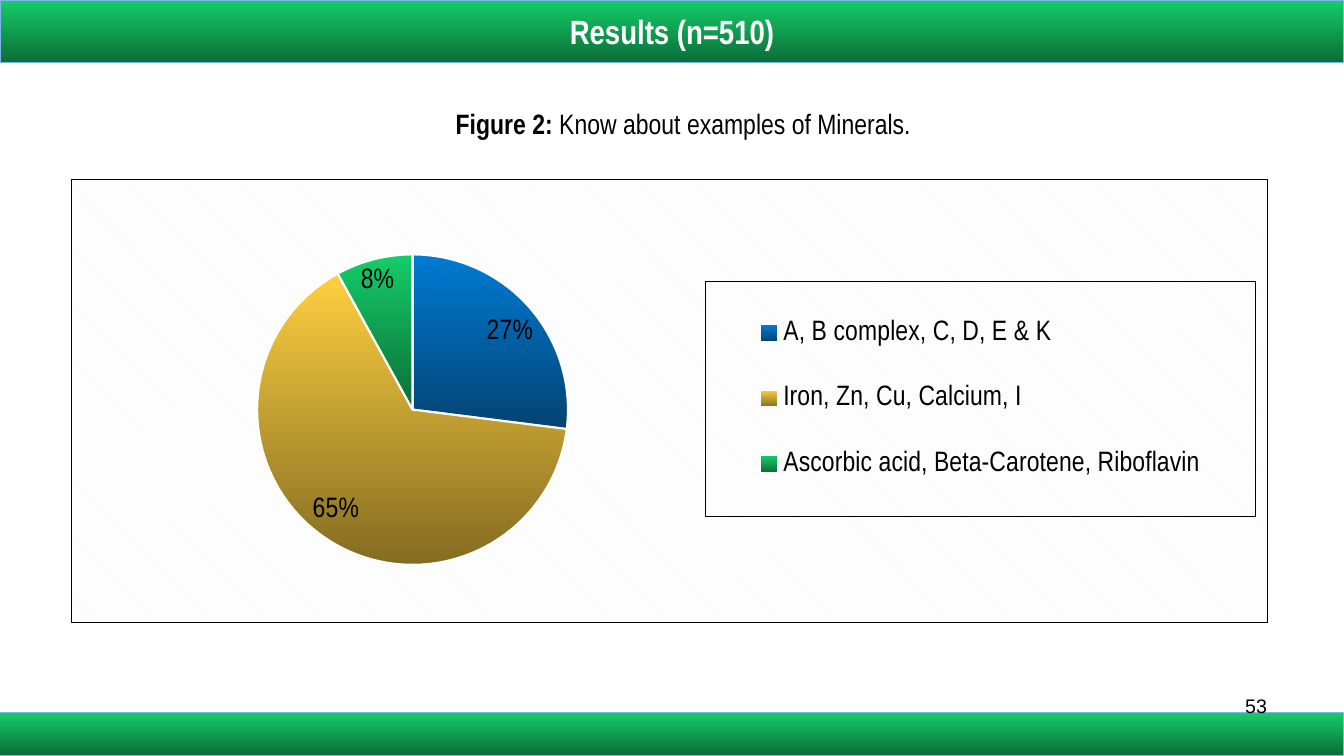
from dataclasses import dataclass

from lxml.etree import _Element
from pptx import Presentation
from pptx.chart.chart import Chart
from pptx.chart.data import CategoryChartData
from pptx.dml.color import RGBColor
from pptx.dml.fill import FillFormat
from pptx.enum.chart import XL_CHART_TYPE, XL_LABEL_POSITION, XL_LEGEND_POSITION
from pptx.enum.shapes import MSO_SHAPE
from pptx.enum.text import MSO_ANCHOR, MSO_AUTO_SIZE, PP_ALIGN
from pptx.oxml import parse_xml
from pptx.oxml.ns import nsdecls, qn
from pptx.shapes.base import BaseShape
from pptx.slide import Slide
from pptx.text.text import Font, TextFrame
from pptx.util import Cm, Pt


@dataclass(frozen=True)
class Gradient:
    top: str
    bottom: str


@dataclass(frozen=True)
class Theme:
    font: str = "Arial Narrow"
    number_font: str = "Arial"
    title_size: int = 24
    body_size: int = 20
    number_size: int = 14
    text: str = "000000"
    light: str = "FFFFFF"
    panel: str = "FCFCFC"
    band_line: str = "7DB6EF"
    blue: Gradient = Gradient("007BD3", "034373")
    gold: Gradient = Gradient("FECF40", "846C21")
    green: Gradient = Gradient("14CD68", "0B6E38")


@dataclass(frozen=True)
class Box:
    """Left, top, width and height: centimetres, or fractions of the chart."""
    left: float
    top: float
    width: float
    height: float

    def lengths(self) -> tuple[Cm, Cm, Cm, Cm]:
        return Cm(self.left), Cm(self.top), Cm(self.width), Cm(self.height)


@dataclass(frozen=True)
class Slice:
    label: str
    percent: int
    gradient: Gradient


THEME = Theme()
PAGE_WIDTH, PAGE_HEIGHT = 33.87, 19.05
HEADER = Box(0, 0, PAGE_WIDTH, 1.57)
FOOTER = Box(0, 17.96, PAGE_WIDTH, 1.07)
CAPTION = Box(10.87, 2.57, 12.7, 1.12)
CHART = Box(1.8, 4.5, 30.15, 11.2)
NUMBER = Box(24.28, 17.35, 7.9, 1.32)
PLOT = Box(0.07, 0.17, 0.43, 0.7)
LEGEND = Box(0.53, 0.23, 0.46, 0.53)
SLICES = [
    Slice("A, B complex, C, D, E & K", 27, THEME.blue),
    Slice("Iron, Zn, Cu, Calcium, I", 65, THEME.gold),
    Slice("Ascorbic acid, Beta-Carotene, Riboflavin", 8, THEME.green),
]


def style_font(font: Font, *, name: str = THEME.font, size: int = THEME.body_size,
               color: str = THEME.text, bold: bool = False) -> None:
    font.name, font.size, font.bold = name, Pt(size), bold
    font.color.rgb = RGBColor.from_string(color)


def write(frame: TextFrame, text: str, *, align: PP_ALIGN = PP_ALIGN.CENTER,
          name: str = THEME.font, size: int = THEME.body_size,
          color: str = THEME.text, bold: bool = False) -> None:
    """Add a formatted span to the first paragraph."""
    para = frame.paragraphs[0]
    para.alignment = align
    span = para.add_run()
    span.text = text
    style_font(span.font, name=name, size=size, color=color, bold=bold)


def fill_gradient(fill: FillFormat, gradient: Gradient) -> None:
    fill.gradient()
    fill.gradient_angle = 270
    for stop, color, position in zip(fill.gradient_stops,
                                     (gradient.top, gradient.bottom), (0, 1)):
        stop.color.rgb = RGBColor.from_string(color)
        stop.position = position


def style_band(band: BaseShape) -> None:
    fill_gradient(band.fill, THEME.green)
    band.line.color.rgb = RGBColor.from_string(THEME.band_line)
    band.line.width = Pt(0.75)
    band.shadow.inherit = False


def add_text_box(page: Slide, place: Box) -> TextFrame:
    frame = page.shapes.add_textbox(*place.lengths()).text_frame
    frame.word_wrap = True
    return frame


def frame_properties(fill: str) -> _Element:
    """Chart-part formatting with a thin dark border."""
    return parse_xml(
        f'<c:spPr {nsdecls("c", "a")}>{fill}<a:ln w="9525"><a:solidFill>'
        f'<a:srgbClr val="{THEME.text}"/></a:solidFill></a:ln></c:spPr>')


def manual_layout(place: Box, target: str = "") -> _Element:
    return parse_xml(
        f'<c:layout {nsdecls("c")}><c:manualLayout>{target}'
        '<c:xMode val="edge"/><c:yMode val="edge"/>'
        f'<c:x val="{place.left}"/><c:y val="{place.top}"/>'
        f'<c:w val="{place.width}"/><c:h val="{place.height}"/>'
        '</c:manualLayout></c:layout>')


def arrange_chart(chart: Chart) -> None:
    """Place the plot and legend, and frame the legend and the whole chart."""
    root = chart.element.find(qn("c:chart"))
    plot_area, legend = root.find(qn("c:plotArea")), root.find(qn("c:legend"))
    for part in (plot_area, legend):
        for layout in part.findall(qn("c:layout")):
            part.remove(layout)
    plot_area.insert(0, manual_layout(PLOT, '<c:layoutTarget val="inner"/>'))
    legend.find(qn("c:legendPos")).addnext(manual_layout(LEGEND))
    legend.find(qn("c:overlay")).addnext(frame_properties("<a:noFill/>"))
    root.addnext(frame_properties(
        '<a:pattFill prst="dkDnDiag">'
        f'<a:fgClr><a:srgbClr val="{THEME.light}"/></a:fgClr>'
        f'<a:bgClr><a:srgbClr val="{THEME.panel}"/></a:bgClr></a:pattFill>'))


def add_pie(page: Slide) -> None:
    data = CategoryChartData()
    data.categories = [portion.label for portion in SLICES]
    data.add_series("Series 1", [portion.percent for portion in SLICES])
    chart = page.shapes.add_chart(XL_CHART_TYPE.PIE, *CHART.lengths(), data).chart
    chart.has_title = False
    style_font(chart.font)

    # Slices
    plot = chart.plots[0]
    plot.vary_by_categories = True
    for index, portion in enumerate(SLICES):
        point = plot.series[0].points[index]
        fill_gradient(point.format.fill, portion.gradient)
        point.format.line.color.rgb = RGBColor.from_string(THEME.light)
        point.format.line.width = Pt(1.5)

    # Labels
    plot.has_data_labels = True
    labels = plot.data_labels
    labels.show_percentage, labels.show_value = True, False
    labels.number_format, labels.number_format_is_linked = "0%", False
    labels.position = XL_LABEL_POSITION.BEST_FIT
    style_font(labels.font)

    # Legend
    chart.has_legend = True
    chart.legend.position = XL_LEGEND_POSITION.RIGHT
    chart.legend.include_in_layout = False
    style_font(chart.legend.font)
    arrange_chart(chart)


def main() -> None:
    deck = Presentation()
    deck.slide_width, deck.slide_height = Cm(PAGE_WIDTH), Cm(PAGE_HEIGHT)
    page = deck.slides.add_slide(deck.slide_layouts[5])

    # Chart and caption
    add_pie(page)
    caption = add_text_box(page, CAPTION)
    write(caption, "Figure 2: ", bold=True)
    write(caption, "Know about examples of Minerals.")

    # Header band
    title = page.shapes.title
    title.left, title.top, title.width, title.height = HEADER.lengths()
    style_band(title)
    title.text_frame.auto_size = MSO_AUTO_SIZE.NONE
    title.text_frame.vertical_anchor = MSO_ANCHOR.MIDDLE
    write(title.text_frame, "Results (n=510)", size=THEME.title_size,
          color=THEME.light, bold=True)

    # Footer band and page number
    style_band(page.shapes.add_shape(MSO_SHAPE.RECTANGLE, *FOOTER.lengths()))
    write(add_text_box(page, NUMBER), "53", align=PP_ALIGN.RIGHT,
          name=THEME.number_font, size=THEME.number_size)

    deck.save("out.pptx")


if __name__ == "__main__":
    main()
